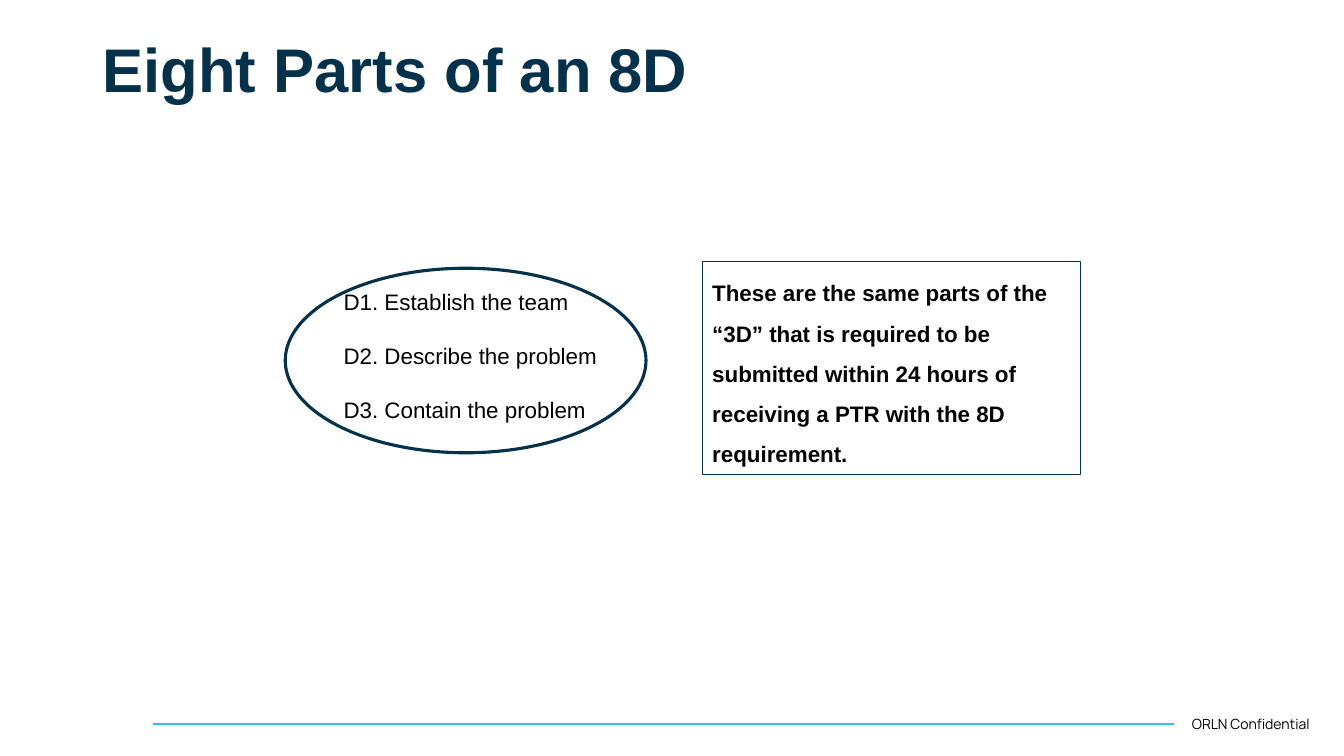
from dataclasses import dataclass

import pptx
import pptx.dml.color
import pptx.enum.shapes
import pptx.enum.text
import pptx.oxml
import pptx.shapes.autoshape
import pptx.slide
import pptx.util
from pptx.util import Cm

RGB = pptx.dml.color.RGBColor
SHAPE = pptx.enum.shapes.MSO_SHAPE
ANCHOR = pptx.enum.text.MSO_ANCHOR


@dataclass(frozen=True)
class Theme:
    navy: RGB = RGB(0x05, 0x31, 0x4A)
    cyan: RGB = RGB(0x30, 0xBF, 0xEF)
    black: RGB = RGB(0, 0, 0)
    font: str = "Arial"
    footer_font: str = "Manrope"
    title_size: int = 44
    body_size: int = 16
    footer_size: int = 10


THEME = Theme()


@dataclass(frozen=True)
class Box:
    left: float
    top: float
    width: float
    height: float

    def lengths(self) -> tuple[Cm, Cm, Cm, Cm]:
        return Cm(self.left), Cm(self.top), Cm(self.width), Cm(self.height)


@dataclass(frozen=True)
class Label:
    text: str
    box: Box
    size: int = THEME.body_size
    color: RGB = THEME.black
    font: str = THEME.font
    bold: bool = False
    spacing: float = 1.0
    anchor: ANCHOR = ANCHOR.TOP


STEPS = ("Establish the team", "Describe the problem", "Contain the problem")
STEP_TOP, STEP_PITCH = 7.14, 1.36

TITLE = Label("Eight Parts of an 8D", Box(2.34, 0.71, 29.21, 2.24), THEME.title_size,
              THEME.navy, bold=True, spacing=0.9, anchor=ANCHOR.MIDDLE)
FOOTER = Label("ORLN Confidential", Box(29.79, 17.91, 3.76, 0.69), THEME.footer_size,
               font=THEME.footer_font)
NOTE = Label("These are the same parts of the “3D” that is required to be submitted "
             "within 24 hours of receiving a PTR with the 8D requirement.",
             Box(17.7, 6.58, 9.53, 5.38), bold=True, spacing=1.5)
RING = Box(7.19, 6.76, 9.09, 4.65)


def write(sp: pptx.shapes.autoshape.Shape, label: Label) -> None:
    tf = sp.text_frame
    tf.text = label.text
    tf.word_wrap = True
    tf.vertical_anchor = label.anchor
    p = tf.paragraphs[0]
    p.alignment = pptx.enum.text.PP_ALIGN.LEFT
    p.line_spacing = label.spacing
    for r in p.runs:
        r.font.name = label.font
        r.font.size = pptx.util.Pt(label.size)
        r.font.bold = label.bold
        r.font.color.rgb = label.color


def add_label(s: pptx.slide.Slide, label: Label) -> None:
    write(s.shapes.add_textbox(*label.box.lengths()), label)


def add_outline(s: pptx.slide.Slide, kind: SHAPE, box: Box,
                weight: float) -> pptx.shapes.autoshape.Shape:
    sp = s.shapes.add_shape(kind, *box.lengths())
    sp.shadow.inherit = False
    sp.fill.background()
    sp.line.color.rgb = THEME.navy
    sp.line.width = pptx.util.Pt(weight)
    return sp


def add_rule(s: pptx.slide.Slide, left: float, right: float, y: float) -> None:
    line = s.shapes.add_connector(pptx.enum.shapes.MSO_CONNECTOR.STRAIGHT,
                                  Cm(left), Cm(y), Cm(right), Cm(y))
    line.line.color.rgb = THEME.cyan
    line.line.width = pptx.util.Pt(1.5)
    line._element.spPr.append(pptx.oxml.parse_xml(
        '<a:effectLst xmlns:a="http://schemas.openxmlformats.org/drawingml/2006/main"/>'))


def main() -> None:
    """Build the slide on the eight parts of an 8D and save it."""
    prs = pptx.Presentation()
    prs.slide_width, prs.slide_height = Cm(33.87), Cm(19.05)
    s = prs.slides.add_slide(prs.slide_layouts[6])

    add_rule(s, 3.86, 29.59, 18.24)
    add_label(s, FOOTER)
    add_label(s, TITLE)
    write(add_outline(s, SHAPE.RECTANGLE, NOTE.box, 0.75), NOTE)
    add_outline(s, SHAPE.OVAL, RING, 2.25)
    for i, step in enumerate(STEPS):
        box = Box(8.41, STEP_TOP + i * STEP_PITCH, 19.25, 0.94)
        add_label(s, Label(f"D{i + 1}. {step}", box))

    prs.save("out.pptx")


if __name__ == "__main__":
    main()
